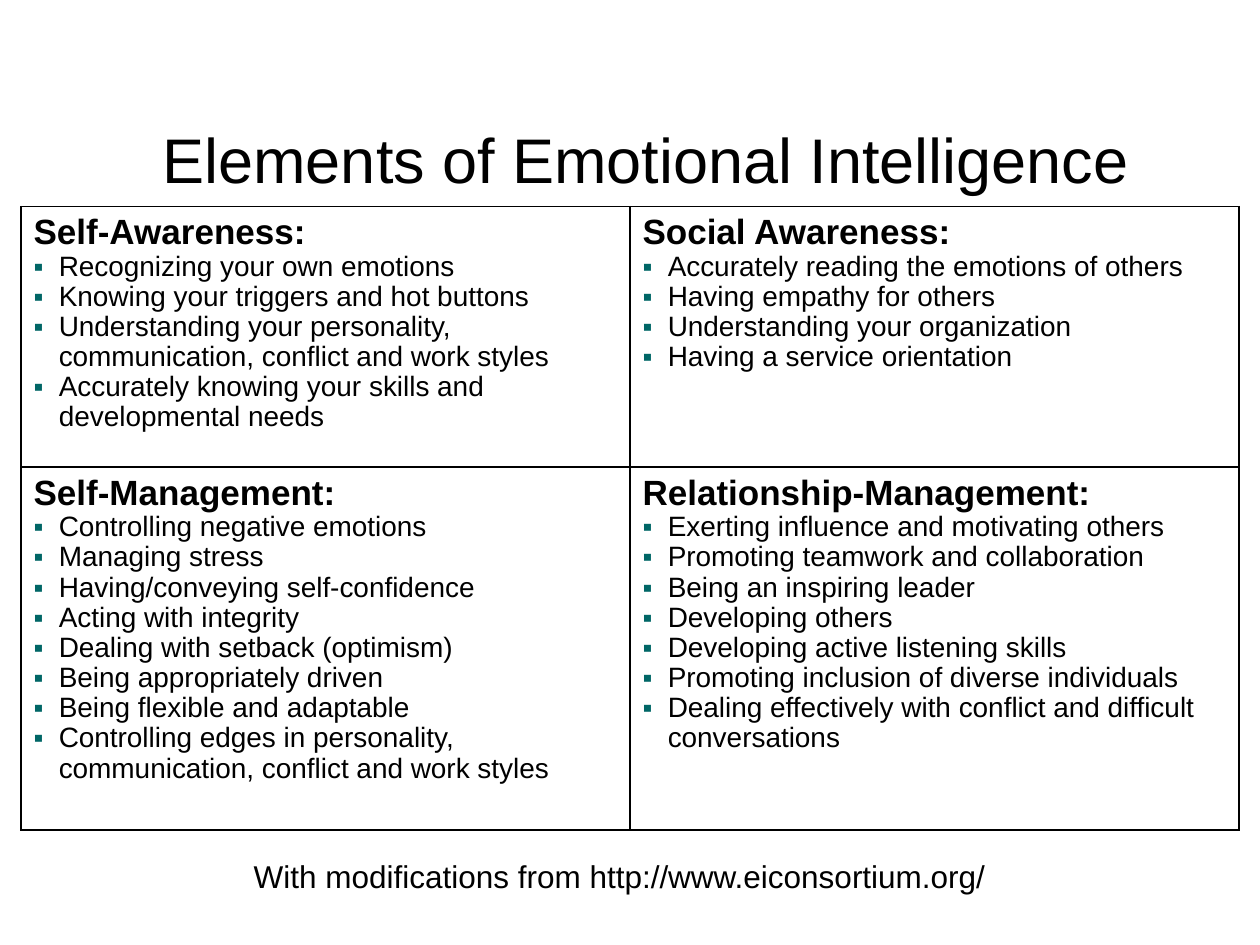
from dataclasses import dataclass

from lxml import etree
from pptx import Presentation
from pptx.dml.color import RGBColor
from pptx.enum.text import PP_ALIGN
from pptx.oxml.ns import qn
from pptx.util import Pt


@dataclass(frozen=True)
class Theme:
    font: str = "Arial"
    ink: str = "000000"
    paper: str = "FFFFFF"
    mark: str = "006666"
    title: int = 36
    head: int = 20
    item: int = 16
    note: int = 18
    indent: float = 14.4
    rule: float = 1


@dataclass(frozen=True)
class Box:
    left: float
    top: float
    width: float
    height: float


@dataclass(frozen=True)
class Group:
    head: str
    items: tuple[str, ...]


THEME = Theme()
GRID = Box(12, 118, 696, 356.4)
ROWS = (149, 207.4)
GROUPS = (
    (
        Group("Self-Awareness:", (
            "Recognizing your own emotions",
            "Knowing your triggers and hot buttons",
            "Understanding your personality, communication, conflict and work styles",
            "Accurately knowing your skills and developmental needs",
        )),
        Group("Social Awareness:", (
            "Accurately reading the emotions of others",
            "Having empathy for others",
            "Understanding your organization",
            "Having a service orientation",
        )),
    ),
    (
        Group("Self-Management:", (
            "Controlling negative emotions",
            "Managing stress",
            "Having/conveying self-confidence",
            "Acting with integrity",
            "Dealing with setback (optimism)",
            "Being appropriately driven",
            "Being flexible and adaptable",
            "Controlling edges in personality, communication, conflict and work styles",
        )),
        Group("Relationship-Management:", (
            "Exerting influence and motivating others",
            "Promoting teamwork and collaboration",
            "Being an inspiring leader",
            "Developing others",
            "Developing active listening skills",
            "Promoting inclusion of diverse individuals",
            "Dealing effectively with conflict and difficult conversations",
        )),
    ),
)


def style(para, size: int, align=PP_ALIGN.LEFT, bold: bool = False) -> None:
    para.alignment = align
    font = para.font
    font.name, font.size, font.bold = THEME.font, Pt(size), bold
    font.color.rgb = RGBColor.from_string(THEME.ink)


def add_line(slide, box: Box, words: str, size: int, inset: float = 3.6) -> None:
    """Add a centred line of text, inset from the top of its box."""
    frame = slide.shapes.add_textbox(
        Pt(box.left), Pt(box.top), Pt(box.width), Pt(box.height)).text_frame
    frame.word_wrap = True
    frame.margin_top = Pt(inset)
    frame.text = words
    style(frame.paragraphs[0], size, PP_ALIGN.CENTER)


def add_mark(para) -> None:
    """Give a paragraph a square bullet and a hanging indent."""
    props = para._p.get_or_add_pPr()
    props.set("marL", str(Pt(THEME.indent)))
    props.set("indent", str(-Pt(THEME.indent)))
    tint = etree.SubElement(props, qn("a:buClr"))
    etree.SubElement(tint, qn("a:srgbClr"), val=THEME.mark)
    etree.SubElement(props, qn("a:buFont"), typeface=THEME.font)
    etree.SubElement(props, qn("a:buChar"), char="▪")


def add_rules(cell) -> None:
    """Draw all four borders of a cell."""
    props = cell._tc.get_or_add_tcPr()
    for spot, side in enumerate(("lnL", "lnR", "lnT", "lnB")):
        line = etree.Element(qn(f"a:{side}"), w=str(Pt(THEME.rule)))
        fill = etree.SubElement(line, qn("a:solidFill"))
        etree.SubElement(fill, qn("a:srgbClr"), val=THEME.ink)
        props.insert(spot, line)


def fill_cell(cell, group: Group) -> None:
    cell.fill.solid()
    cell.fill.fore_color.rgb = RGBColor.from_string(THEME.paper)
    add_rules(cell)
    frame = cell.text_frame
    frame.text = group.head
    style(frame.paragraphs[0], THEME.head, bold=True)
    for item in group.items:
        para = frame.add_paragraph()
        para.text = item
        add_mark(para)
        style(para, THEME.item)
        para.line_spacing = 0.97


def add_grid(slide) -> None:
    table = slide.shapes.add_table(
        len(ROWS), len(GROUPS[0]), Pt(GRID.left), Pt(GRID.top),
        Pt(GRID.width), Pt(GRID.height)).table
    table.first_row = table.horz_banding = False
    for row, (height, groups) in enumerate(zip(ROWS, GROUPS)):
        table.rows[row].height = Pt(height)
        for col, group in enumerate(groups):
            fill_cell(table.cell(row, col), group)


def main() -> None:
    deck = Presentation()
    deck.slide_width, deck.slide_height = Pt(720), Pt(540)
    slide = deck.slides.add_slide(deck.slide_layouts[6])
    add_line(slide, Box(36, 60, 666, 78),
             "Elements of Emotional Intelligence", THEME.title, 9)
    add_grid(slide)
    add_line(slide, Box(6, 486, 696, 36),
             "With modifications from http://www.eiconsortium.org/", THEME.note)
    deck.save("out.pptx")


if __name__ == "__main__":
    main()
